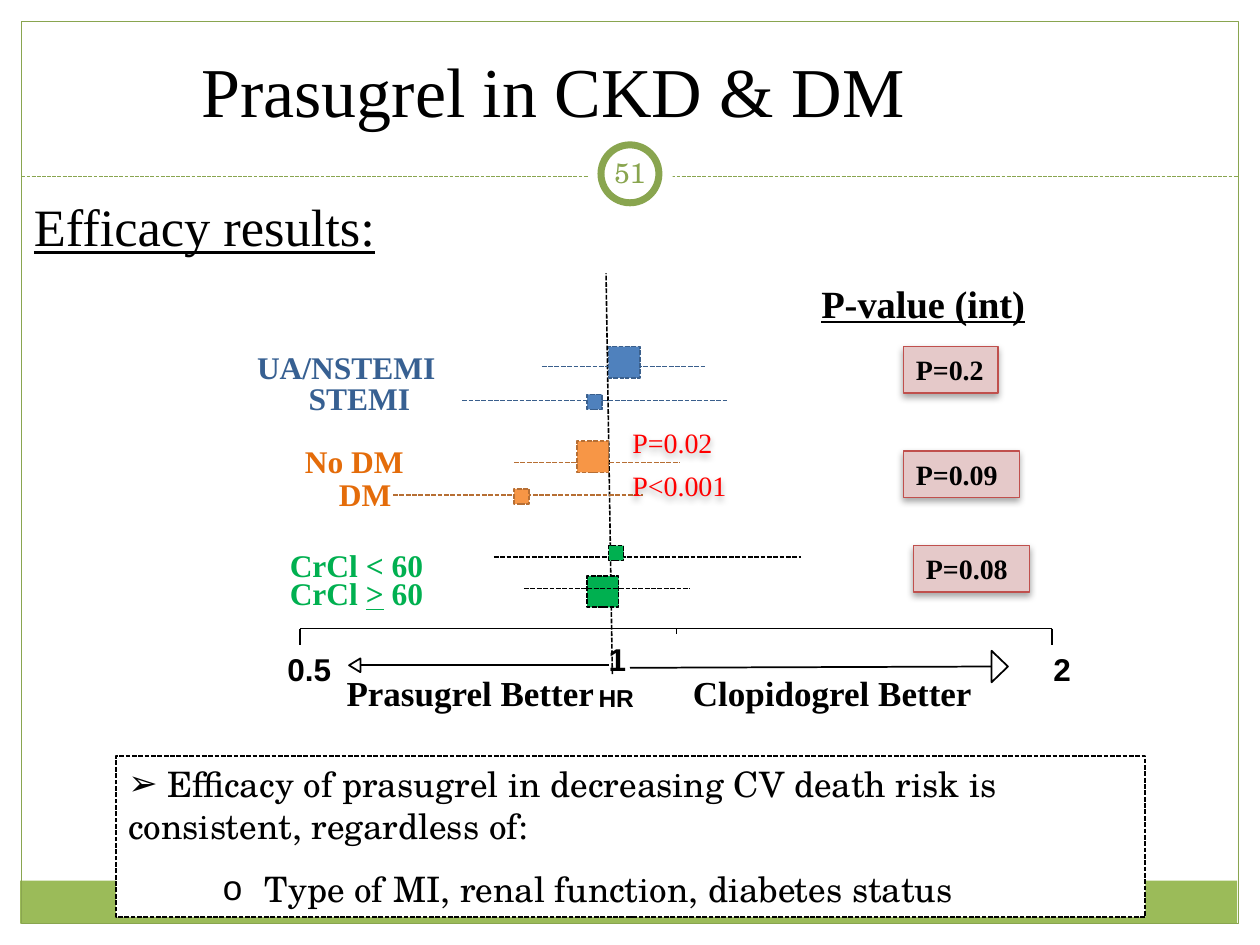
from lxml import etree
from pptx import Presentation
from pptx.dml.color import RGBColor
from pptx.enum.dml import MSO_LINE
from pptx.enum.shapes import MSO_CONNECTOR, MSO_SHAPE
from pptx.enum.text import MSO_ANCHOR, PP_ALIGN
from pptx.oxml.ns import qn
from pptx.util import Inches, Pt

BLACK = RGBColor(0x00, 0x00, 0x00)
WHITE = RGBColor(0xFF, 0xFF, 0xFF)
RED = RGBColor(0xFF, 0x00, 0x00)
LEAF = RGBColor(0x9B, 0xBB, 0x59)
OLIVE = RGBColor(0x89, 0xA5, 0x4F)
BLUE = RGBColor(0x4F, 0x81, 0xBD)
BLUE_LINE = RGBColor(0x3A, 0x5F, 0x8C)
BLUE_TEXT = RGBColor(0x37, 0x60, 0x92)
ORANGE = RGBColor(0xF7, 0x96, 0x46)
ORANGE_LINE = RGBColor(0xB7, 0x6F, 0x34)
ORANGE_TEXT = RGBColor(0xE4, 0x6C, 0x0A)
GREEN = RGBColor(0x00, 0xB0, 0x50)
PINK = RGBColor(0xE5, 0xC9, 0xC9)
CRIMSON = RGBColor(0xC0, 0x50, 0x4D)
SERIF = "Times New Roman"
SCHOLA = "TeX Gyre Schola"
SANS = "Arial"

BLUES = (BLUE, BLUE_LINE, BLUE_TEXT)
ORANGES = (ORANGE, ORANGE_LINE, ORANGE_TEXT)
GREENS = (GREEN, BLACK, GREEN)
SMALL, LARGE = 0.12, 0.25

SUBGROUPS = [
    ([("UA/NSTEMI", False)], (2.04, 2.76, 1.43), BLUES, (4.3, 5.6, 2.91), (4.83, 2.75, LARGE)),
    ([("STEMI", False)], (2.45, 3.01, 0.81), BLUES, (3.67, 5.77, 3.18), (4.66, 3.13, SMALL)),
    ([("No DM", False)], (2.42, 3.51, 0.79), ORANGES, (4.08, 5.4, 3.67), (4.58, 3.5, LARGE)),
    ([("DM", False)], (2.69, 3.77, 0.42), ORANGES, (3.12, 5.1, 3.93), (4.08, 3.88, SMALL)),
    ([("CrCl < 60", False)], (2.3, 4.33, 1.07), GREENS, (3.92, 6.36, 4.42), (4.83, 4.33, SMALL)),
    ([("CrCl ", False), (">", True), (" 60", False)], (2.3, 4.56, 1.07), GREENS,
     (4.16, 5.48, 4.67), (4.66, 4.57, LARGE)),
]


def style_line(line, color, width, dashed=False):
    line.color.rgb = color
    line.width = Pt(width)
    if dashed:
        line.dash_style = MSO_LINE.SQUARE_DOT


def add_line(page, start, end, color=BLACK, width=1, dashed=False):
    connector = page.shapes.add_connector(
        MSO_CONNECTOR.STRAIGHT, *[Inches(value) for value in (*start, *end)])
    style_line(connector.line, color, width, dashed)
    etree.SubElement(connector._element.spPr, qn("a:effectLst"))


def paint(box, fill=None, line=None, width=0.75, dashed=False):
    box.shadow.inherit = False
    if fill is None:
        box.fill.background()
    else:
        box.fill.solid()
        box.fill.fore_color.rgb = fill
    if line is None:
        box.line.fill.background()
    else:
        style_line(box.line, line, width, dashed)


def add_box(page, place, kind=MSO_SHAPE.RECTANGLE, **look):
    box = page.shapes.add_shape(kind, *[Inches(value) for value in place])
    paint(box, **look)
    return box


def add_span(para, text, size, font=SERIF, color=BLACK, bold=False, underline=False):
    span = para.add_run()
    span.text = text
    span.font.size = Pt(size)
    span.font.name = font
    span.font.color.rgb = color
    span.font.bold = bold
    span.font.underline = underline


def set_frame(box, inset=(0.1, 0.05), wrap=True, anchor=MSO_ANCHOR.TOP):
    frame = box.text_frame
    frame.word_wrap = wrap
    frame.vertical_anchor = anchor
    frame.margin_left = frame.margin_right = Inches(inset[0])
    frame.margin_top = frame.margin_bottom = Inches(inset[1])
    para = frame.paragraphs[0]
    para.alignment = PP_ALIGN.LEFT
    return para


def add_text(page, place, text, size, anchor=MSO_ANCHOR.TOP, **look):
    box = page.shapes.add_textbox(*[Inches(value) for value in place])
    add_span(set_frame(box, anchor=anchor), text, size, **look)
    return box


def add_label(page, place, spans, size, font=SERIF, color=BLACK):
    box = page.shapes.add_textbox(*[Inches(value) for value in place])
    para = set_frame(box, inset=(0, 0), wrap=False)
    for text, underline in spans:
        add_span(para, text, size, font, color, True, underline)


def add_shadow(box):
    box.shadow.inherit = False
    effects = box._element.spPr.find(qn("a:effectLst"))
    shadow = etree.SubElement(effects, qn("a:outerShdw"), blurRad=str(Pt(4)),
                              dist=str(Pt(2)), dir="5400000", rotWithShape="0")
    color = etree.SubElement(shadow, qn("a:srgbClr"), val="000000")
    etree.SubElement(color, qn("a:alpha"), val="35000")


def add_bullet(para, mark, margin=0, indent=0):
    props = para._p.get_or_add_pPr()
    props.set("marL", str(Inches(margin)))
    props.set("indent", str(Inches(indent)))
    etree.SubElement(props, qn("a:buFont"), typeface=SANS)
    etree.SubElement(props, qn("a:buChar"), char=mark)


def add_arrow(page, tail, tip, length, half):
    base = tip[0] - length if tip[0] > tail[0] else tip[0] + length
    corners = [(base, tip[1] - half), (base, tip[1] + half), tip]
    points = [(Inches(x), Inches(y)) for x, y in corners]
    builder = page.shapes.build_freeform(*points[0], scale=1.0)
    builder.add_line_segments(points[1:], close=True)
    paint(builder.convert_to_shape(), line=BLACK, width=1)
    add_line(page, tail, (base, tip[1]))


def add_decoration(page):
    add_box(page, (0.16, 6.99, 9.66, 0.34), fill=LEAF)
    add_box(page, (0.17, 0.17, 9.66, 7.16), line=OLIVE)
    add_line(page, (0.17, 1.4), (9.83, 1.4), OLIVE, 0.75, True)
    add_box(page, (4.67, 1.05, 0.67, 0.67), MSO_SHAPE.OVAL, fill=WHITE)
    add_box(page, (4.77, 1.15, 0.46, 0.46), MSO_SHAPE.OVAL, fill=WHITE, line=OLIVE, width=4)
    number = page.shapes.add_textbox(Inches(4.75), Inches(1.13), Inches(0.5), Inches(0.48))
    para = set_frame(number, inset=(0.05, 0.05), anchor=MSO_ANCHOR.MIDDLE)
    para.alignment = PP_ALIGN.CENTER
    add_span(para, "51", 16, SCHOLA, OLIVE)


def add_forest_plot(page):
    add_line(page, (4.86, 5.35), (4.81, 2.17), BLACK, 0.9, True)
    for spans, (left, top, width), colors, (low, high, level), (x, y, side) in SUBGROUPS:
        fill, line, color = colors
        add_label(page, (left, top, width, 0.3), spans, 18, color=color)
        if fill != GREEN or side == SMALL:
            add_line(page, (low, level), (high, level), line, 0.9, True)
        add_box(page, (x, y, side, side), fill=fill, line=line, width=0.9, dashed=True)
        if fill == GREEN and side == LARGE:
            add_line(page, (low, level), (high, level), line, 0.9, True)


def add_axis(page):
    add_line(page, (2.38, 4.99), (8.35, 4.99), BLACK, 0.75)
    for x, bottom in ((2.38, 5.12), (5.37, 5.03), (8.35, 5.12)):
        add_line(page, (x, 4.99), (x, bottom))
    for text, x, y, width in (("0.5", 2.28, 5.16, 0.35), ("1", 4.83, 5.08, 0.14),
                              ("2", 8.36, 5.16, 0.14)):
        add_label(page, (x, y, width, 0.3), [(text, False)], 18, SANS)
    add_arrow(page, (4.83, 5.28), (2.77, 5.28), 0.09, 0.055)
    add_arrow(page, (5, 5.3), (8, 5.29), 0.13, 0.125)
    add_label(page, (2.75, 5.33, 1.98, 0.34), [("Prasugrel Better", False)], 20)
    add_label(page, (5.5, 5.33, 2.23, 0.34), [("Clopidogrel Better", False)], 20)
    add_label(page, (4.75, 5.42, 0.35, 0.24), [("HR", False)], 14, SANS)


def add_p_values(page):
    add_text(page, (6.42, 2.17, 1.94, 0.47), "P-value (int)", 22, bold=True, underline=True)
    for text, y in (("P=0.02", 3.33), ("P<0.001", 3.67)):
        add_shadow(add_text(page, (4.92, y, 1.08, 0.37), text, 16, color=RED))
    for text, x, y, width in (("P=0.2", 7.17, 2.75, 0.75), ("P=0.09", 7.17, 3.58, 0.92),
                              ("P=0.08", 7.25, 4.33, 0.92)):
        box = add_box(page, (x, y, width, 0.37), fill=PINK, line=CRIMSON)
        add_shadow(box)
        add_span(set_frame(box), text, 16, bold=True)


def add_conclusion(page):
    box = add_box(page, (0.92, 6, 8.17, 1.28), fill=WHITE, line=BLACK, width=0.9, dashed=True)
    para = set_frame(box)
    add_bullet(para, "➢")
    add_span(para, " Efficacy of prasugrel in decreasing CV death risk is consistent, "
                   "regardless of:", 20, SCHOLA)
    para = box.text_frame.add_paragraph()
    para.alignment = PP_ALIGN.LEFT
    para.level = 2
    para.space_before = Pt(12)
    add_bullet(para, "o", 1, -0.25)
    add_span(para, " Type of MI, renal function, diabetes status", 20, SCHOLA)


def add_title(page):
    title = page.shapes.title
    title.left, title.top = Inches(1.5), Inches(0.33)
    title.width, title.height = Inches(5.85), Inches(0.77)
    add_span(set_frame(title, wrap=False), "Prasugrel in CKD & DM", 40)


def main():
    deck = Presentation()
    deck.slide_width, deck.slide_height = Inches(10), Inches(7.5)
    page = deck.slides.add_slide(deck.slide_layouts[5])
    add_title(page)
    add_decoration(page)
    add_text(page, (0.17, 1.33, 3.17, 0.92), "Efficacy results:", 30,
             anchor=MSO_ANCHOR.MIDDLE, underline=True)
    add_forest_plot(page)
    add_axis(page)
    add_p_values(page)
    add_conclusion(page)
    deck.save("out.pptx")


if __name__ == "__main__":
    main()
